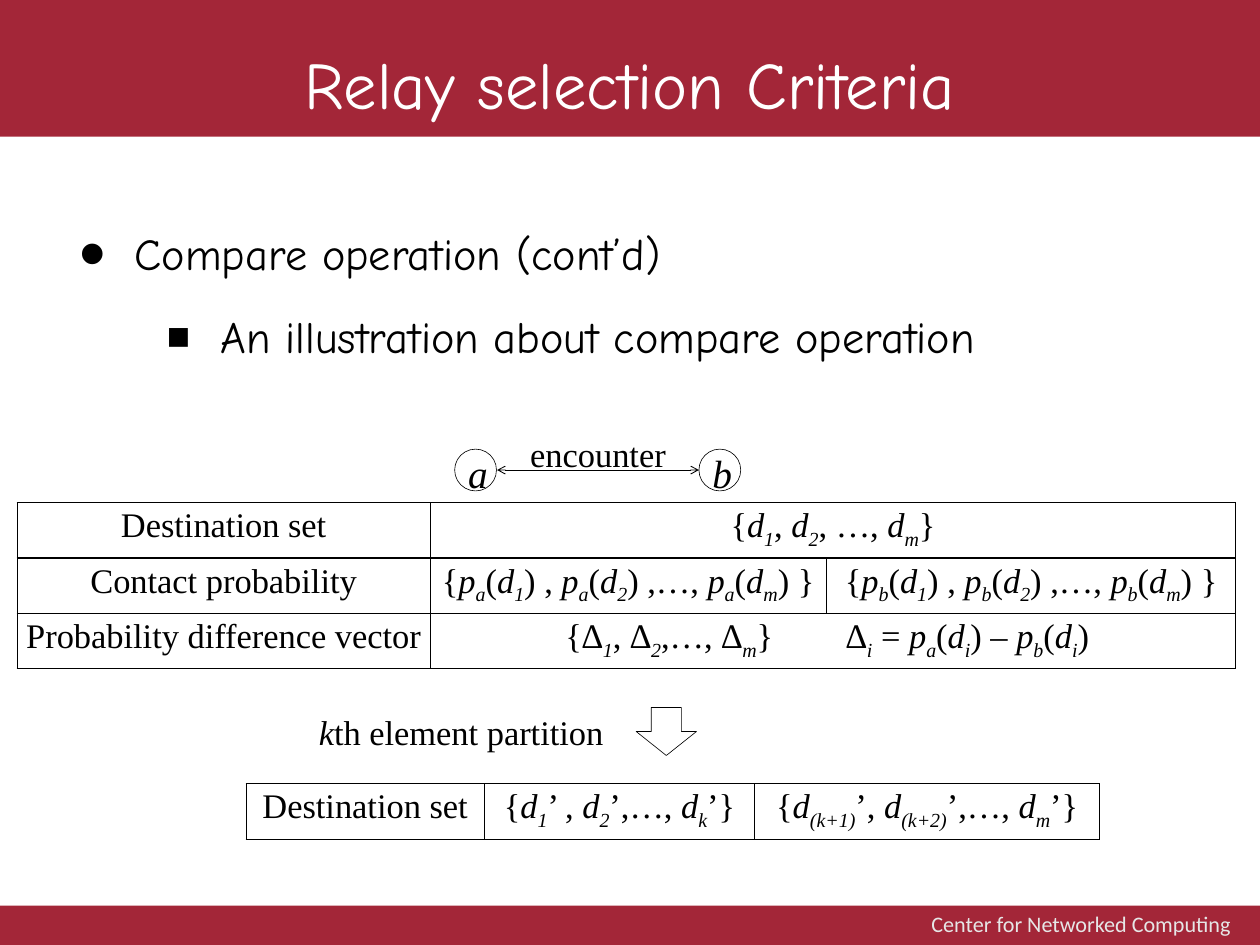
from dataclasses import dataclass

import pptx
import pptx.dml.color
import pptx.enum.shapes
import pptx.enum.text
import pptx.oxml
import pptx.oxml.ns
import pptx.util
from lxml import etree

Pt = pptx.util.Pt
RGB = pptx.dml.color.RGBColor
Shape = pptx.enum.shapes.MSO_SHAPE
Align = pptx.enum.text.PP_ALIGN
Anchor = pptx.enum.text.MSO_ANCHOR
qn = pptx.oxml.ns.qn


@dataclass(frozen=True)
class Theme:
    band: str = "A32638"
    ink: str = "000000"
    light: str = "FFFFFF"
    pale: str = "E6E6E6"
    head: str = "Comic Neue"
    serif: str = "Times New Roman"
    sans: str = "Calibri"
    title: int = 54
    list: int = 36
    node: int = 32
    text: int = 28
    foot: int = 18


THEME = Theme()


def add_xml(parent, tag, **attrs):
    return etree.SubElement(parent, qn(tag), attrs)


def write(frame, text, size=THEME.text, font=THEME.serif, color=THEME.ink,
          align=Align.CENTER, anchor=Anchor.TOP, inset=None, wrap=True):
    """Add a paragraph; *x* is italic and _x_ is an italic subscript."""
    frame.word_wrap = wrap
    frame.auto_size = pptx.enum.text.MSO_AUTO_SIZE.NONE
    frame.vertical_anchor = anchor
    if inset:
        (frame.margin_left, frame.margin_top,
         frame.margin_right, frame.margin_bottom) = map(Pt, inset)
    para = frame.paragraphs[-1]
    if para.runs:
        para = frame.add_paragraph()
    para.alignment = align
    for i, outer in enumerate(text.split("_")):
        for j, part in enumerate(outer.split("*")):
            if not part:
                continue
            run = para.add_run()
            run.text = part
            run.font.size = Pt(size)
            run.font.name = font
            run.font.color.rgb = RGB.from_string(color)
            run.font.italic = bool(i % 2 or j % 2)
            if i % 2:
                run._r.get_or_add_rPr().set("baseline", "-25000")
    return para


def move(shape, box):
    shape.left, shape.top, shape.width, shape.height = map(Pt, box)


def add_label(slide, text, box, **style):
    frame = slide.shapes.add_textbox(*map(Pt, box)).text_frame
    write(frame, text, **style)


def add_band(slide, box):
    """Add a filled bar behind everything else."""
    bar = slide.shapes.add_shape(Shape.RECTANGLE, *map(Pt, box))
    bar.shadow.inherit = False
    bar.fill.solid()
    bar.fill.fore_color.rgb = RGB.from_string(THEME.band)
    bar.line.fill.background()
    bar.element.getparent().insert(2, bar.element)


def add_hollow(slide, kind, box):
    shape = slide.shapes.add_shape(kind, *map(Pt, box))
    shape.shadow.inherit = False
    shape.fill.background()
    shape.line.color.rgb = RGB.from_string(THEME.ink)
    shape.line.width = Pt(0.5)
    return shape


def add_node(slide, name, left):
    node = add_hollow(slide, Shape.FLOWCHART_CONNECTOR, (left, 365, 34, 34))
    write(node.text_frame, f"*{name}*", size=THEME.node, anchor=Anchor.MIDDLE,
          inset=(4, 4, 0, 0), wrap=False)


def add_link(slide, left, right, top):
    """Add a level line with an arrowhead at both ends."""
    link = slide.shapes.add_connector(
        pptx.enum.shapes.MSO_CONNECTOR.STRAIGHT,
        Pt(left), Pt(top), Pt(right), Pt(top))
    link.line.color.rgb = RGB.from_string(THEME.ink)
    link.line.width = Pt(0.75)
    line = link.line._get_or_add_ln()
    for end in ("a:headEnd", "a:tailEnd"):
        add_xml(line, end, type="arrow")
    add_xml(link.element.spPr, "a:effectLst")


def add_item(frame, text, level, mark, left):
    para = write(frame, text, size=THEME.list, font=THEME.head,
                 align=Align.LEFT)
    para.level = level
    para.space_before = Pt(24 if level else 0)
    props = para._p.get_or_add_pPr()
    props.set("marL", str(Pt(left)))
    props.set("indent", str(Pt(-44.6)))
    tint = add_xml(props, "a:buClr")
    add_xml(tint, "a:srgbClr", val=THEME.ink)
    add_xml(props, "a:buSzPct", val="171000")
    add_xml(props, "a:buFont", typeface="Arial")
    add_xml(props, "a:buChar", char=mark)


def frame_cell(cell):
    props = cell._tc.get_or_add_tcPr()
    for side in ("a:lnL", "a:lnR", "a:lnT", "a:lnB"):
        line = add_xml(props, side, w=str(Pt(1)))
        add_xml(add_xml(line, "a:solidFill"), "a:srgbClr", val=THEME.ink)
    cell.fill.background()


def add_grid(slide, left, top, widths, rows, high=45):
    """Add a table; a short row lets its last cell span the rest."""
    grid = slide.shapes.add_table(
        len(rows), len(widths), Pt(left), Pt(top),
        Pt(sum(widths)), Pt(high * len(rows))).table
    grid.first_row = grid.horz_banding = False
    for col, width in zip(grid.columns, widths):
        col.width = Pt(width)
    for i, texts in enumerate(rows):
        grid.rows[i].height = Pt(high)
        for j in range(len(widths)):
            cell = grid.cell(i, j)
            cell.margin_left = cell.margin_right = Pt(3)
            frame_cell(cell)
        for j, text in enumerate(texts):
            write(grid.cell(i, j).text_frame, text)
        if len(texts) < len(widths):
            grid.cell(i, len(texts) - 1).merge(grid.cell(i, len(widths) - 1))
    return grid


def set_tab(cell, start, stop):
    """Start the text at one offset and its second part at another."""
    cell.margin_left = Pt(start)
    para = cell.text_frame.paragraphs[0]
    para.alignment = Align.LEFT
    tabs = add_xml(para._p.get_or_add_pPr(), "a:tabLst")
    add_xml(tabs, "a:tab", pos=str(Pt(stop - start)), algn="l")


def odds(node):
    return "{" + " ,…, ".join((
        f"*p*_{node}_(*d*_1_) , *p*_{node}_(*d*_2_)",
        f"*p*_{node}_(*d*_m_) }}"))


def main():
    deck = pptx.Presentation()
    deck.slide_width, deck.slide_height = Pt(1024), Pt(768)
    slide = deck.slides.add_slide(deck.slide_layouts[1])
    title, body = slide.placeholders

    add_band(slide, (-2, -1, 1028, 112))
    add_band(slide, (0, 736, 1028, 36))
    add_label(slide, "Center for Networked Computing", (757, 740, 268, 21),
              size=THEME.foot, font=THEME.sans, color=THEME.pale,
              align=Align.LEFT, anchor=Anchor.MIDDLE, inset=(0, 0, 0, 0))

    move(title, (51, 31, 922, 128))
    write(title.text_frame, "Relay selection Criteria", size=THEME.title,
          font=THEME.head, color=THEME.light)
    move(body, (26, 179, 948, 507))
    frame = body.text_frame
    frame.margin_left = frame.margin_right = Pt(10)
    frame.margin_top = frame.margin_bottom = Pt(5)
    add_item(frame, "Compare operation (cont’d)", 0, "•", 73.5)
    add_item(frame, "An illustration about compare operation", 1, "▪", 143.3)

    add_node(slide, "a", 369.5)
    add_node(slide, "b", 568)
    add_link(slide, 404, 568, 382)
    add_label(slide, "encounter", (421, 348, 130, 41))

    grid = add_grid(slide, 14, 408.5, (335.5, 322, 333), (
        ("Destination set", "{*d*_1_, *d*_2_, …, *d*_m_}"),
        ("Contact probability", odds("a"), odds("b")),
        ("Probability difference vector",
         "{*∆*_1_, *∆*_2_,…, *∆*_m_}\t"
         "*∆*_i_ = *p*_a_(*d*_i_) – *p*_b_(*d*_i_)")))
    set_tab(grid.cell(2, 1), 110, 338)

    add_hollow(slide, Shape.DOWN_ARROW, (517, 575, 49, 39))
    add_label(slide, "*k*th element partition", (252, 574, 254, 41),
              align=Align.LEFT)
    add_grid(slide, 200, 637, (193.5, 220, 280), ((
        "Destination set", "{*d*_1_’ , *d*_2_’,…, *d*_k_’}",
        "{*d*_(k+1)_’, *d*_(k+2)_’,…, *d*_m_’}"),))
    deck.save("out.pptx")


if __name__ == "__main__":
    main()
